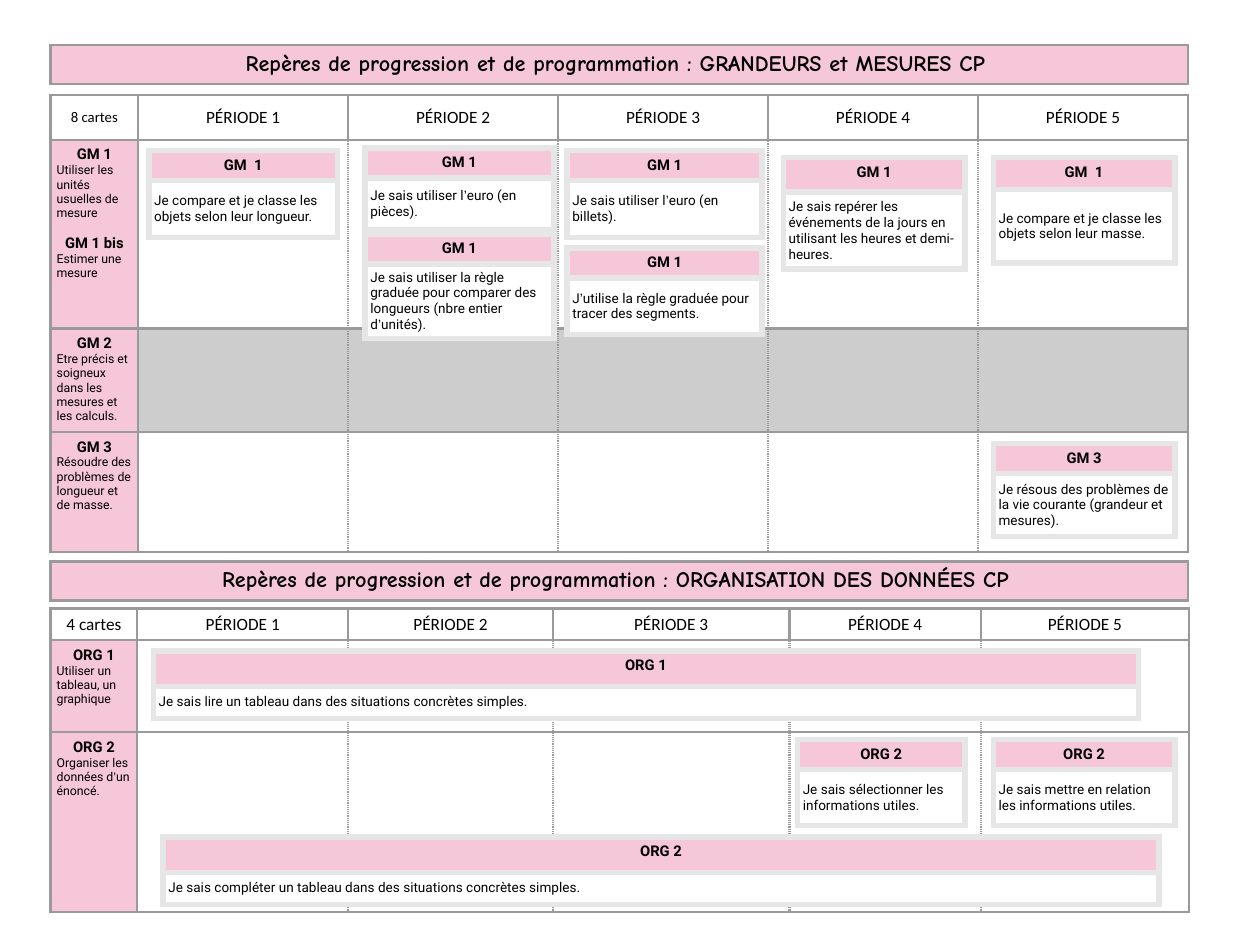
from pptx import Presentation
from pptx.dml.color import RGBColor
from pptx.enum.text import MSO_ANCHOR as ANCHOR, PP_ALIGN as ALIGN
from pptx.oxml.ns import qn
from pptx.util import Inches, Pt
from lxml.etree import SubElement

PINK, GREY, WHITE, BLACK = "F6C7D9", "CDCDCD", "FFFFFF", "000000"
GRID_LINE, CARD_LINE = "9A9A9A", "E6E6E6"
LEFT, WIDTH = 0.57, 12.84
BANNER_H = 0.44


def rgb(color):
    return RGBColor.from_string(color)


def write(p, text, size, font="Roboto", bold=False, align=ALIGN.LEFT):
    p.alignment = align
    f = p.font
    f.name, f.size, f.bold = font, Pt(size), bold
    f.color.rgb = rgb(BLACK)
    # Apostrophes are set in Arial
    for i, part in enumerate(text.split("’")):
        if i:
            r = p.add_run()
            r.text = "’"
            r.font.name = "Arial"
        r = p.add_run()
        r.text = part


def style_cell(cell, fill, color, width, inset, anchor=ANCHOR.TOP, dotted=""):
    """Set borders, fill and margins; dotted lists the dotted sides (L, R)."""
    tcPr = cell._tc.get_or_add_tcPr()
    for side in "LRTB":
        ln = SubElement(tcPr, qn(f"a:ln{side}"), w=str(Pt(width)))
        solid = SubElement(ln, qn("a:solidFill"))
        SubElement(solid, qn("a:srgbClr"), val=color)
        dash = "sysDot" if side in dotted else "solid"
        SubElement(ln, qn("a:prstDash"), val=dash)
    if fill:
        cell.fill.solid()
        cell.fill.fore_color.rgb = rgb(fill)
    else:
        cell.fill.background()
    cell.margin_left = cell.margin_right = Inches(inset)
    cell.margin_top = cell.margin_bottom = Inches(inset)
    cell.vertical_anchor = anchor


def add_plain_table(slide, x, y, cols, rows):
    frame = slide.shapes.add_table(len(rows), len(cols), Inches(x), Inches(y),
                                   Inches(sum(cols)), Inches(sum(rows)))
    table = frame.table
    table.first_row = table.horz_banding = False
    for column, w in zip(table.columns, cols):
        column.width = Inches(w)
    for row, h in zip(table.rows, rows):
        row.height = Inches(h)
    return table


def add_banner(slide, x, y, text):
    cell = add_plain_table(slide, x, y, [WIDTH], [BANNER_H]).cell(0, 0)
    style_cell(cell, PINK, GRID_LINE, 2, 0.07)
    write(cell.text_frame.paragraphs[0], text, 18, "Comic Neue", True, ALIGN.CENTER)


def add_grid(slide, x, y, cols, rows, count, count_size, skills):
    table = add_plain_table(slide, x, y, cols, rows)
    last = len(cols) - 1

    # Header row
    for c in range(len(cols)):
        cell = table.cell(0, c)
        style_cell(cell, None, GRID_LINE, 2, 0.06, ANCHOR.MIDDLE)
        write(cell.text_frame.paragraphs[0], f"PÉRIODE {c}" if c else count,
              14 if c else count_size, "Calibri", align=ALIGN.CENTER)

    # Skill column and period cells
    for r, (fill, entries) in enumerate(skills, 1):
        cell = table.cell(r, 0)
        style_cell(cell, PINK, GRID_LINE, 2, 0.07)
        tf = cell.text_frame
        for i, (code, goal) in enumerate(entries):
            p = tf.add_paragraph() if i else tf.paragraphs[0]
            write(p, code, 12, bold=True, align=ALIGN.CENTER)
            if i:
                p.space_before = Pt(11.5)
            write(tf.add_paragraph(), goal, 10)
        for c in range(1, last + 1):
            dotted = ("L" if c > 1 else "") + ("R" if c < last else "")
            style_cell(table.cell(r, c), fill, GRID_LINE, 2, 0.07, dotted=dotted)


def add_card(slide, x, y, w, head_h, body_h, code, goal):
    table = add_plain_table(slide, x, y, [w], [head_h, body_h])
    head, body = table.cell(0, 0), table.cell(1, 0)
    style_cell(head, PINK, CARD_LINE, 5, 0.07)
    write(head.text_frame.paragraphs[0], code, 12, bold=True, align=ALIGN.CENTER)
    style_cell(body, WHITE, CARD_LINE, 5, 0.06, ANCHOR.MIDDLE)
    write(body.text_frame.paragraphs[0], goal, 11)


def add_section(slide, x, y, subject, grid_dy, grid, cards):
    add_grid(slide, x, y + grid_dy, **grid)
    add_banner(slide, x, y,
               f"Repères de progression et de programmation : {subject} ")
    for dx, dy, *card in cards:
        add_card(slide, x + dx, y + dy, *card)


MEASURES_GRID = dict(
    cols=[0.99] + [2.37] * 5, rows=[0.51, 2.13, 1.17, 1.35],
    count="8 cartes", count_size=12,
    skills=[
        (None, [("GM 1", "Utiliser les unités usuelles de mesure"),
                ("GM 1 bis", "Estimer une mesure")]),
        (GREY, [("GM 2", "Etre précis et soigneux dans les mesures et les calculs.")]),
        (None, [("GM 3", "Résoudre des problèmes de longueur et de masse.")]),
    ])
# Cards: offset in the section, width, head and body heights, code, goal
MEASURES_CARDS = [
    (8.27, 1.27, 2.05, 0.39, 0.87, "GM 1",
     "Je sais repérer les événements de la jours en utilisant les heures "
     "et demi-heures."),
    (1.11, 1.19, 2.13, 0.34, 0.64, "GM  1",
     "Je compare et je classe les objets selon leur longueur."),
    (10.64, 1.27, 2.05, 0.36, 0.83, "GM  1",
     "Je compare et je classe les objets selon leur masse."),
    (5.83, 2.29, 2.2, 0.34, 0.64, "GM 1",
     "J’utilise la règle graduée pour tracer des segments."),
    (3.55, 2.13, 2.13, 0.34, 0.84, "GM 1",
     "Je sais utiliser la règle graduée pour comparer des longueurs "
     "(nbre entier d’unités)."),
    (3.55, 1.16, 2.13, 0.34, 0.58, "GM 1", "Je sais utiliser l’euro (en pièces)."),
    (10.64, 4.5, 2.05, 0.34, 0.71, "GM 3",
     "Je résous des problèmes de la vie courante (grandeur et mesures)."),
    (5.83, 1.19, 2.2, 0.34, 0.64, "GM 1", "Je sais utiliser l’euro (en billets)."),
]

DATA_GRID = dict(
    cols=[0.98, 2.38, 2.31, 2.67, 2.16, 2.35], rows=[0.36, 1.04, 2.03],
    count="4 cartes", count_size=14,
    skills=[
        (None, [("ORG 1", "Utiliser un tableau, un graphique")]),
        (None, [("ORG 2", "Organiser les données d’un énoncé.")]),
    ])
DATA_CARDS = [
    (1.16, 1.01, 11.12, 0.4, 0.36, "ORG 1",
     "Je sais lire un tableau dans des situations concrètes simples."),
    (1.27, 3.11, 11.24, 0.4, 0.36, "ORG 2",
     "Je sais compléter un tableau dans des situations concrètes simples."),
    (8.43, 2.01, 1.89, 0.34, 0.63, "ORG 2",
     "Je sais sélectionner les informations utiles."),
    (10.64, 2.01, 2.05, 0.34, 0.63, "ORG 2",
     "Je sais mettre en relation les informations utiles."),
]


def main():
    prs = Presentation()
    prs.slide_width, prs.slide_height = Inches(14.22), Inches(10.67)
    slide = prs.slides.add_slide(prs.slide_layouts[6])
    add_section(slide, LEFT, 0.51, "GRANDEURS et MESURES CP", 0.56,
                MEASURES_GRID, MEASURES_CARDS)
    add_section(slide, LEFT, 6.34, "ORGANISATION DES DONNÉES CP", 0.53,
                DATA_GRID, DATA_CARDS)
    prs.save("out.pptx")


if __name__ == "__main__":
    main()
